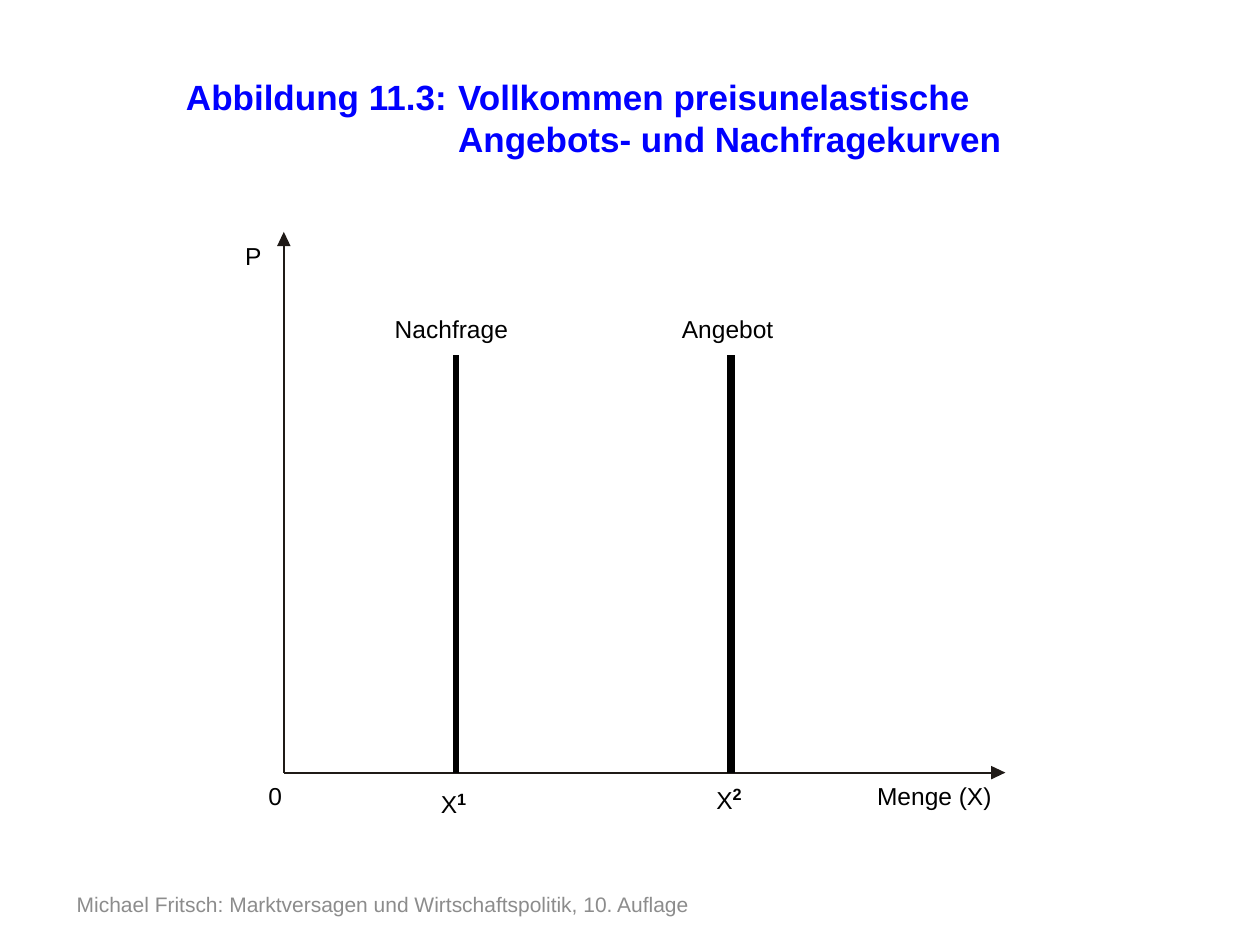
from dataclasses import dataclass

from lxml import etree
from pptx import Presentation
from pptx.dml.color import RGBColor
from pptx.enum import shapes, text
from pptx.oxml import ns
from pptx.util import Pt


@dataclass(frozen=True)
class Theme:
    font: str = "Arial"
    title: RGBColor = RGBColor(0x00, 0x00, 0xFF)
    footer: RGBColor = RGBColor(0x8C, 0x8C, 0x8C)
    axis: RGBColor = RGBColor(0x1F, 0x1A, 0x17)
    ink: RGBColor = RGBColor(0x00, 0x00, 0x00)
    title_size: float = 20
    label_size: float = 14
    index_size: float = 16
    footer_size: float = 12
    axis_width: float = 1.2


THEME = Theme()
SLIDE_SIZE = (720, 540)
TITLE = "Abbildung 11.3:\tVollkommen preisunelastische Angebots- und Nachfragekurven"
TITLE_BOX = (99.2, 39.5, 499, 55.5)
TITLE_HANG = 155.5
FOOTER = "Michael Fritsch: Marktversagen und Wirtschaftspolitik, 10. Auflage"
FOOTER_BOX = (36.8, 502.5, 391, 28.8)

ORIGIN = (162.2, 441.5)
PRICE_TOP = 132.5
QUANTITY_END = 574.5
HEAD_LENGTH = 8.2
HEAD_HALF = 3.9
CURVE_TOP = 203
LABEL_HEIGHT = 31
CURVES = [(260.4, 3.6), (417.9, 4.5)]
LABELS = [
    ("Nachfrage", "", 218.5, 174.5, 96.5),
    ("Angebot", "", 382.6, 174.5, 96.5),
    ("Menge (X)", "", 494.1, 441.1, 96.5),
    ("P", "", 133, 132.5, 26),
    ("0", "", 146.2, 441.1, 26),
    ("X", "1", 244.8, 443.5, 52.5),
    ("X", "2", 402.3, 441.1, 52.5),
]


def format_run(run, size, color, bold=False):
    run.font.name = THEME.font
    run.font.size = Pt(size)
    run.font.bold = bold
    run.font.color.rgb = color


def add_text(slide, content, box, size, color, bold=False):
    frame = slide.shapes.add_textbox(*map(Pt, box)).text_frame
    frame.word_wrap = True
    frame.text = content
    paragraph = frame.paragraphs[0]
    format_run(paragraph.runs[0], size, color, bold)
    return frame, paragraph


def add_line(slide, start, end, color, width):
    line = slide.shapes.add_connector(
        shapes.MSO_CONNECTOR.STRAIGHT, *map(Pt, (*start, *end)))
    line.line.color.rgb = color
    line.line.width = Pt(width)
    etree.SubElement(line._element.spPr, ns.qn("a:effectLst"))


def add_axis(slide, tip, direction):
    x, y = tip
    dx, dy = direction
    base = (x - dx * HEAD_LENGTH, y - dy * HEAD_LENGTH)
    corners = [(base[0] + side * dy * HEAD_HALF, base[1] + side * dx * HEAD_HALF)
               for side in (1, -1)]
    add_line(slide, ORIGIN, base, THEME.axis, THEME.axis_width)
    outline = slide.shapes.build_freeform(Pt(x), Pt(y))
    outline.add_line_segments([(Pt(cx), Pt(cy)) for cx, cy in corners], close=True)
    head = outline.convert_to_shape()
    head.shadow.inherit = False
    head.fill.solid()
    head.fill.fore_color.rgb = THEME.axis
    head.line.fill.background()


def add_label(slide, name, index, left, top, width):
    paragraph = add_text(slide, name, (left, top, width, LABEL_HEIGHT),
                         THEME.label_size, THEME.ink)[1]
    paragraph.line_spacing = 1.1
    if index:
        superscript = paragraph.add_run()
        superscript.text = index
        format_run(superscript, THEME.index_size, THEME.ink, True)
        superscript.font._element.set("baseline", "30000")


def main():
    deck = Presentation()
    deck.slide_width, deck.slide_height = map(Pt, SLIDE_SIZE)
    slide = deck.slides.add_slide(deck.slide_layouts[6])

    footer = add_text(slide, FOOTER, FOOTER_BOX, THEME.footer_size, THEME.footer)[0]
    footer.vertical_anchor = text.MSO_ANCHOR.MIDDLE

    title = add_text(slide, TITLE, TITLE_BOX, THEME.title_size, THEME.title, True)[1]
    hanging = title._p.get_or_add_pPr()
    hanging.set("marL", str(Pt(TITLE_HANG)))
    hanging.set("indent", str(-Pt(TITLE_HANG)))

    add_axis(slide, (ORIGIN[0], PRICE_TOP), (0, -1))
    add_axis(slide, (QUANTITY_END, ORIGIN[1]), (1, 0))
    for quantity, width in CURVES:
        add_line(slide, (quantity, CURVE_TOP), (quantity, ORIGIN[1]), THEME.ink, width)
    for label in LABELS:
        add_label(slide, *label)

    deck.save("out.pptx")


if __name__ == "__main__":
    main()
